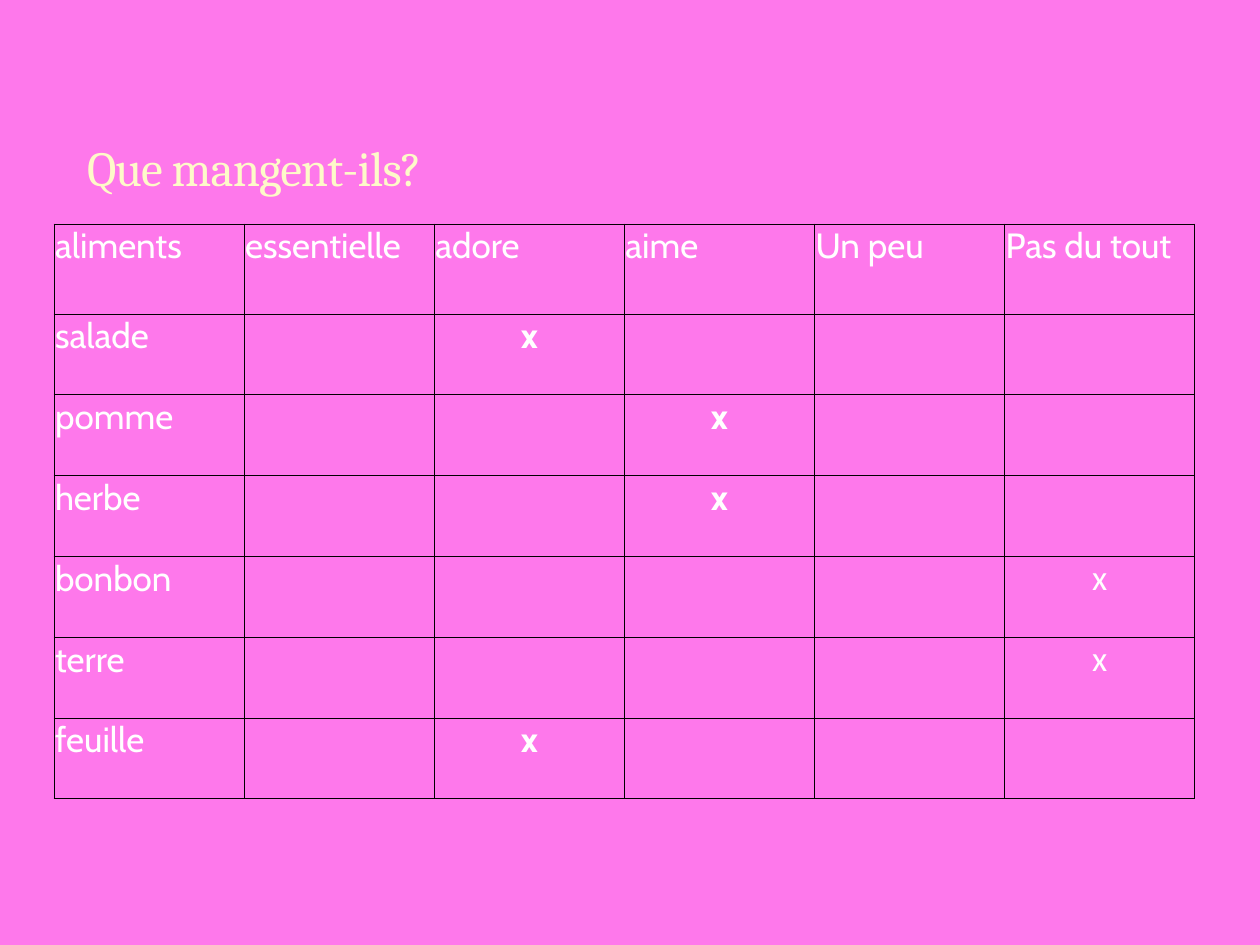
from dataclasses import dataclass

from lxml import etree
from pptx import Presentation
from pptx import util as u
from pptx.dml.color import RGBColor
from pptx.enum import text
from pptx.oxml.ns import qn

EMU_PER_PX = 914400 / 126


@dataclass(frozen=True)
class Theme:
    background: str = "FE78EB"
    title: str = "FEFAC9"
    body: str = "FFFFFF"
    border: str = "000000"
    title_font: str = "Cambria"
    body_font: str = "Cabin"
    mark_font: str = "Calibri"
    title_size: int = 28
    body_size: int = 20
    border_width: float = 0.5


THEME = Theme()
HEADERS = ["aliments", "essentielle", "adore", "aime", "Un peu", "Pas du tout"]
# Each food and the column that holds its mark
FOODS = [("salade", "adore"), ("pomme", "aime"), ("herbe", "aime"),
         ("bonbon", "Pas du tout"), ("terre", "Pas du tout"), ("feuille", "adore")]


def px(n):
    return u.Emu(round(n * EMU_PER_PX))


def set_margins(target, left, top, right, bottom):
    target.margin_left, target.margin_top = px(left), px(top)
    target.margin_right, target.margin_bottom = px(right), px(bottom)


def style_run(r, font, size, color, bold=False):
    r.font.name, r.font.size, r.font.bold = font, u.Pt(size), bold
    r.font.color.rgb = RGBColor.from_string(color)


def set_borders(cell):
    """Draw the four sides; the line elements must precede the fill."""
    tc_pr = cell._tc.get_or_add_tcPr()
    for i, side in enumerate(("lnL", "lnR", "lnT", "lnB")):
        ln = etree.Element(qn(f"a:{side}"), w=str(u.Pt(THEME.border_width)))
        fill = etree.SubElement(ln, qn("a:solidFill"))
        etree.SubElement(fill, qn("a:srgbClr"), val=THEME.border)
        tc_pr.insert(i, ln)


def write_cell(cell, words, font=THEME.body_font, bold=False, align=text.PP_ALIGN.LEFT):
    set_margins(cell, 1, 1, 1, 0)
    p = cell.text_frame.paragraphs[0]
    p.text, p.alignment = words, align
    style_run(p.runs[0], font, THEME.body_size, THEME.body, bold)


def add_title(s, words, x, y, w, h):
    sp = s.shapes.title
    sp.left, sp.top, sp.width, sp.height = px(x), px(y), px(w), px(h)
    tf = sp.text_frame
    tf.text = words
    tf.word_wrap, tf.auto_size = True, text.MSO_AUTO_SIZE.NONE
    tf.vertical_anchor = text.MSO_ANCHOR.BOTTOM
    set_margins(tf, 13, 13, 13, 6)
    p = tf.paragraphs[0]
    p.alignment = text.PP_ALIGN.LEFT
    r = p.runs[0]
    style_run(r, THEME.title_font, THEME.title_size, THEME.title)
    r._r.get_or_add_rPr().set("spc", "-50")


def add_food_table(s, x, y, w, h, header_h):
    rows, cols = len(FOODS) + 1, len(HEADERS)
    table = s.shapes.add_table(rows, cols, px(x), px(y), px(w), px(h)).table
    table.first_row = table.horz_banding = False
    for col in table.columns:
        col.width = px(w / cols)
    for i, row in enumerate(table.rows):
        row.height = px((h - header_h) / len(FOODS) if i else header_h)
    for cell in table.iter_cells():
        cell.fill.background()
        set_borders(cell)

    # Header row
    for c, header in enumerate(HEADERS):
        write_cell(table.cell(0, c), header)

    # Food names and marks; those in the last column are lighter
    for i, (food, answer) in enumerate(FOODS, start=1):
        write_cell(table.cell(i, 0), food)
        last = answer == HEADERS[-1]
        write_cell(table.cell(i, HEADERS.index(answer)), "x",
                   font=THEME.mark_font if last else THEME.body_font,
                   bold=not last, align=text.PP_ALIGN.CENTER)


def main():
    prs = Presentation()
    prs.slide_width, prs.slide_height = px(1260), px(945)
    s = prs.slides.add_slide(prs.slide_layouts[5])
    s.background.fill.solid()
    s.background.fill.fore_color.rgb = RGBColor.from_string(THEME.background)
    add_title(s, "Que mangent-ils?", 74, 55, 1012, 147)
    add_food_table(s, 54, 224, 1141, 575, header_h=90)
    prs.save("out.pptx")


if __name__ == "__main__":
    main()
